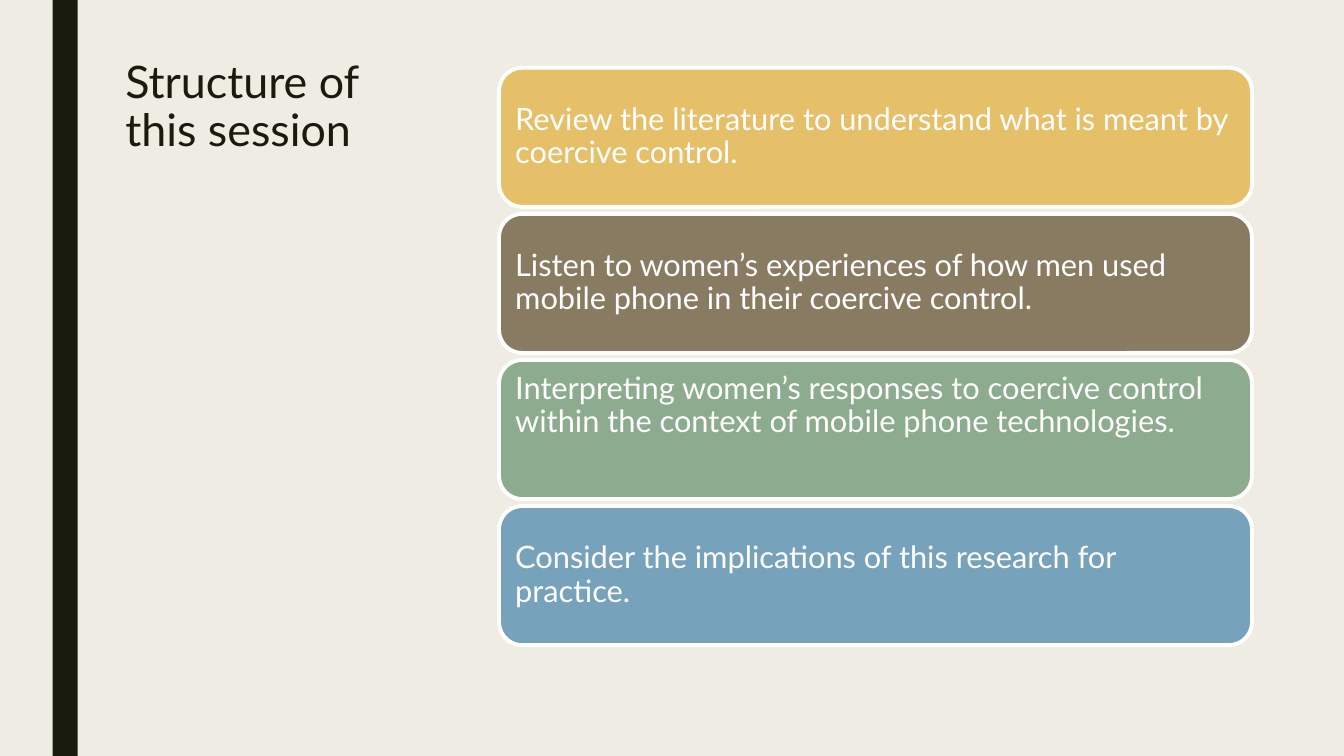
from pptx import Presentation
from pptx.dml.color import RGBColor
from pptx.enum.shapes import MSO_SHAPE as Shape
from pptx.enum.text import MSO_ANCHOR as Anchor, MSO_AUTO_SIZE as AutoSize, PP_ALIGN as Align
from pptx.util import Pt

FONT = "Lato"
COLORS = {
    "paper": "EFEDE3",
    "ink": "191B0E",
    "white": "FFFFFF",
    "gold": "E6C069",
    "brown": "897B61",
    "green": "8DAB8E",
    "blue": "77A2BB",
}
STEPS = [
    ("gold", Anchor.MIDDLE,
     "Review the literature to understand what is meant by coercive control."),
    ("brown", Anchor.MIDDLE,
     "Listen to women’s experiences of how men used mobile phone in their coercive control."),
    ("green", Anchor.TOP,
     "Interpreting women’s responses to coercive control within the context of "
     "mobile phone technologies."),
    ("blue", Anchor.MIDDLE,
     "Consider the implications of this research for practice."),
]


def color(name):
    return RGBColor.from_string(COLORS[name])


def place(shape, box):
    shape.left, shape.top, shape.width, shape.height = map(Pt, box)


def write(frame, text, size, ink, spacing, anchor):
    frame.word_wrap = True
    frame.auto_size = AutoSize.NONE
    frame.vertical_anchor = anchor
    para = frame.paragraphs[0]
    para.text = text
    para.alignment = Align.LEFT
    para.line_spacing = spacing
    para.font.name = FONT
    para.font.size = Pt(size)
    para.font.color.rgb = color(ink)


def add_block(page, kind, box, fill):
    block = page.shapes.add_shape(kind, *map(Pt, box))
    block.shadow.inherit = False
    block.fill.solid()
    block.fill.fore_color.rgb = color(fill)
    return block


def add_stripe(page, box):
    add_block(page, Shape.RECTANGLE, box, "ink").line.fill.background()


def add_title(page, box, text):
    title = page.shapes.title
    place(title, box)
    write(title.text_frame, text, 32, "ink", 0.89, Anchor.TOP)


def add_steps(page, box, steps, gap=5):
    """Stack one rounded card per step, evenly filling the box."""
    left, top, width, height = box
    card_height = (height - gap * (len(steps) - 1)) / len(steps)
    for index, (fill, anchor, text) in enumerate(steps):
        card_top = top + index * (card_height + gap)
        card = add_block(page, Shape.ROUNDED_RECTANGLE,
                         (left, card_top, width, card_height), fill)
        card.line.color.rgb = color("white")
        card.line.width = Pt(2.75)
        frame = card.text_frame
        frame.margin_left = frame.margin_right = Pt(6.7)
        frame.margin_top = frame.margin_bottom = Pt(4.5)
        write(frame, text, 22, "white", 0.9, anchor)


def main():
    deck = Presentation()
    deck.slide_width, deck.slide_height = Pt(960), Pt(540)
    page = deck.slides.add_slide(deck.slide_layouts[5])
    page.background.fill.solid()
    page.background.fill.fore_color.rgb = color("paper")
    add_stripe(page, (37.5, 0, 18, 540))
    add_title(page, (82.3, 39.6, 235.4, 428.4), "Structure of this session")
    add_steps(page, (356.5, 48.4, 537.8, 412.4), STEPS)
    deck.save("out.pptx")


if __name__ == "__main__":
    main()
